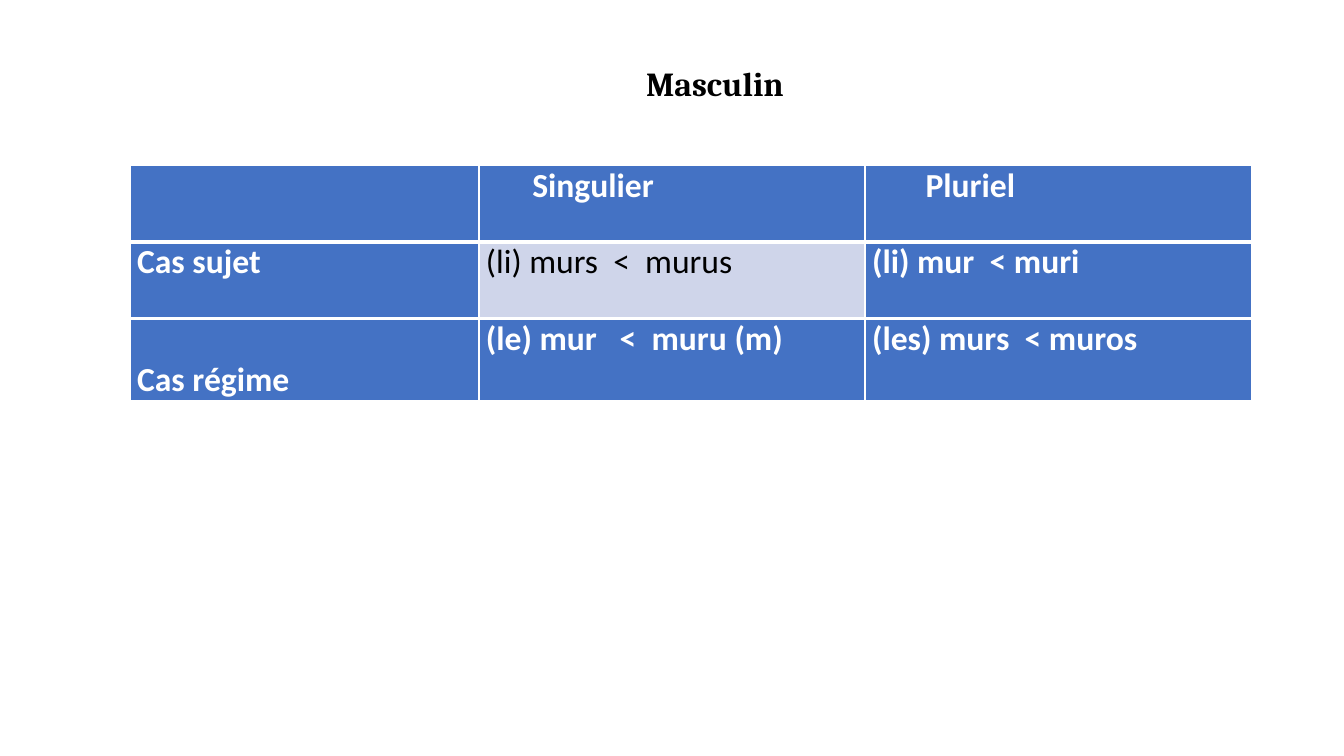
"""Build the slide on masculine declension: subject and object cases, singular and plural."""
import pptx
import pptx.util
import pptx.dml.color
import pptx.enum.text
import pptx.oxml
import pptx.oxml.ns

Inches, Pt = pptx.util.Inches, pptx.util.Pt
RGBColor = pptx.dml.color.RGBColor
ANCHOR, ALIGN = pptx.enum.text.MSO_ANCHOR, pptx.enum.text.PP_ALIGN

BLUE = RGBColor(0x44, 0x72, 0xC4)
PALE = RGBColor(0xCF, 0xD5, 0xEA)
WHITE = RGBColor(0xFF, 0xFF, 0xFF)
BLACK = RGBColor(0, 0, 0)

COL_WIDTHS = [3.46, 3.83, 3.83]
ROW_HEIGHTS = [0.76, 0.76, 0.81]
HEADER_INDENTS = [0, 0.46, 0.53]
MARGIN = 0.07
CASES = [
    ["", "Singulier", "Pluriel"],
    ["Cas sujet", "(li) murs  <  murus", "(li) mur  < muri"],
    ["Cas régime", "(le) mur   <  muru (m)", "(les) murs  < muros"],
]


def add_border(cell, side, width):
    """Draw one white edge of a cell, with its width in points."""
    cell._tc.get_or_add_tcPr().append(pptx.oxml.parse_xml(
        f'<a:{side} {pptx.oxml.ns.nsdecls("a")} w="{Pt(width)}">'
        f'<a:solidFill><a:srgbClr val="{WHITE}"/></a:solidFill></a:{side}>'))


prs = pptx.Presentation()
prs.slide_width, prs.slide_height = Inches(13.33), Inches(7.5)
s = prs.slides.add_slide(prs.slide_layouts[5])

title = s.shapes.title
title.left, title.top = Inches(5.09), Inches(0.52)
title.width, title.height = Inches(4), Inches(0.6)
tf = title.text_frame
tf.text = "Masculin"
tf.vertical_anchor = ANCHOR.MIDDLE
p = tf.paragraphs[0]
p.alignment = ALIGN.CENTER
p.font.name, p.font.size, p.font.bold = "Cambria", Pt(24), True
p.font.color.rgb = BLACK

table = s.shapes.add_table(
    len(ROW_HEIGHTS), len(COL_WIDTHS), Inches(1.29), Inches(1.64),
    Inches(sum(COL_WIDTHS)), Inches(sum(ROW_HEIGHTS))).table
for column, width in zip(table.columns, COL_WIDTHS):
    column.width = Inches(width)
for row, height in zip(table.rows, ROW_HEIGHTS):
    row.height = Inches(height)

last_row = len(CASES) - 1
for i, texts in enumerate(CASES):
    for j, text in enumerate(texts):
        cell = table.cell(i, j)
        plain = (i, j) == (1, 1)
        add_border(cell, "lnL", 1)
        add_border(cell, "lnR", 1)
        add_border(cell, "lnT", 3 if i > 0 else 1)
        add_border(cell, "lnB", 3 if i < last_row else 1)
        cell.fill.solid()
        cell.fill.fore_color.rgb = PALE if plain else BLUE
        indent = HEADER_INDENTS[j] if i == 0 else 0
        cell.margin_left, cell.margin_right = Inches(MARGIN + indent), Inches(MARGIN)
        cell.margin_top = cell.margin_bottom = 0
        cell.vertical_anchor = ANCHOR.BOTTOM if (i, j) == (last_row, 0) else ANCHOR.TOP
        cell.text = text
        p = cell.text_frame.paragraphs[0]
        p.alignment = ALIGN.JUSTIFY
        p.font.name, p.font.size, p.font.bold = "Calibri", Pt(24), not plain
        p.font.color.rgb = BLACK if plain else WHITE

prs.save("out.pptx")
